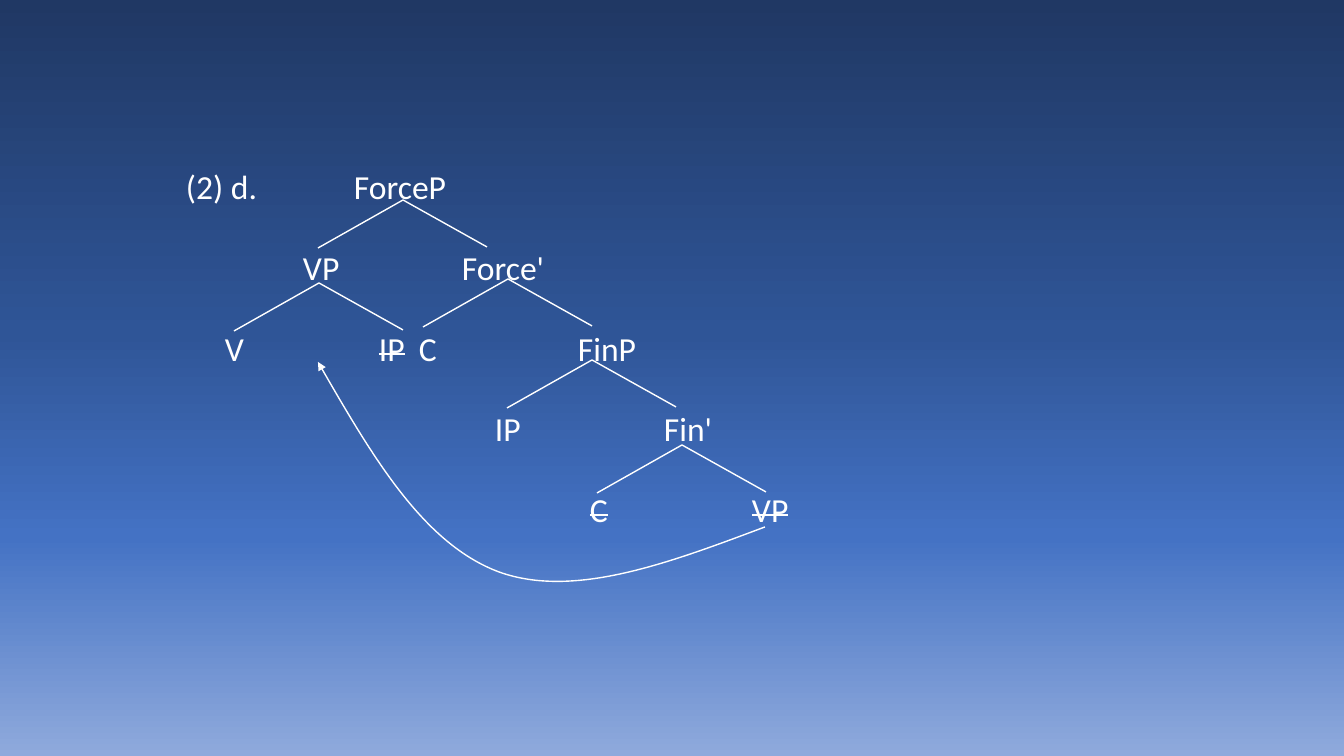
from typing import NamedTuple

from lxml import etree
from pptx import Presentation, util as u
from pptx.dml.color import RGBColor
from pptx.enum import text
from pptx.oxml.ns import qn

PX = 914400 / 100.8
COLOURS = {"ink": "FFFFFF", "navy": "203864", "deep": "2F5597",
           "blue": "4472C4", "pale": "8FAADC"}
SKY = [(0, "navy"), (44, "deep"), (71, "blue"), (100, "pale")]
BOX_LEFT, BOX_TOP, BOX_WIDTH, BOX_HEIGHT = 77, 81, 1190, 596
INSET = 10


class Point(NamedTuple):
    x: int
    y: int


class Node(NamedTuple):
    x: int
    label: str
    struck: bool = False


LEVELS = [
    [Node(186, "(2) d."), Node(354, "ForceP")],
    [Node(303, "VP"), Node(462, "Force'")],
    [Node(225, "V"), Node(379, "IP", True), Node(419, "C"), Node(578, "FinP")],
    [Node(495, "IP"), Node(664, "Fin'")],
    [Node(590, "C", True), Node(752, "VP", True)],
]
APEXES = [Point(403, 200), Point(508, 279), Point(592, 360),
          Point(682, 445), Point(319, 283)]
MOVEMENT = [Point(765, 527), Point(669, 563), Point(574, 599), Point(499, 572),
            Point(424, 544), Point(371, 454), Point(318, 362)]


def px(length: int) -> u.Emu:
    return u.Emu(round(length * PX))


def colour(name: str) -> RGBColor:
    return RGBColor.from_string(COLOURS[name])


def paint_background(page) -> None:
    fill = page.background.fill
    fill.gradient()
    fill.gradient_angle = 270
    stops = page.element.find(".//" + qn("a:gsLst"))
    for stop in list(stops):
        stops.remove(stop)
    for percent, name in SKY:
        stop = etree.SubElement(stops, qn("a:gs"), pos=str(percent * 1000))
        etree.SubElement(stop, qn("a:srgbClr"), val=COLOURS[name])


def add_span(para, words: str, *, struck: bool = False, size: int = 24) -> None:
    span = para.add_run()
    span.text = words
    span.font.name = "Calibri"
    span.font.size = u.Pt(size)
    span.font.color.rgb = colour("ink")
    if struck:
        span.font._element.set("strike", "sngStrike")


def write_level(para, nodes: list[Node]) -> None:
    """Put each node of one tree level at its own tab stop."""
    para.line_spacing = u.Pt(57.6)
    for node in nodes:
        add_span(para, "\t")
        add_span(para, node.label, struck=node.struck)
    settings = para._p.get_or_add_pPr()
    tabs = etree.SubElement(settings, qn("a:tabLst"))
    for node in nodes:
        stop = px(node.x - BOX_LEFT - INSET)
        etree.SubElement(tabs, qn("a:tab"), pos=str(stop), algn="l")


def write_tree(page) -> None:
    box = page.shapes.add_textbox(px(BOX_LEFT), px(BOX_TOP),
                                  px(BOX_WIDTH), px(BOX_HEIGHT))
    frame = box.text_frame
    frame.word_wrap = True
    frame.vertical_anchor = text.MSO_ANCHOR.TOP
    frame.margin_left = frame.margin_right = px(INSET)
    frame.margin_top, frame.margin_bottom = px(45), px(5)
    for index, nodes in enumerate(LEVELS):
        para = frame.add_paragraph() if index else frame.paragraphs[0]
        write_level(para, nodes)


def draw_outline(page, points: list[Point]):
    builder = page.shapes.build_freeform(*points[0], scale=PX)
    builder.add_line_segments(points[1:], close=False)
    outline = builder.convert_to_shape()
    outline.shadow.inherit = False
    outline.fill.background()
    outline.line.color.rgb = colour("ink")
    outline.line.width = u.Pt(1)
    return outline


def draw_branches(page, apex: Point) -> None:
    draw_outline(page, [Point(apex.x - 85, apex.y + 48), apex,
                        Point(apex.x + 84, apex.y + 47)])


def draw_movement(page) -> None:
    """Draw the arrow as cubic curves, three points to a curve."""
    arrow = draw_outline(page, MOVEMENT)
    route = arrow._element.find(".//" + qn("a:path"))
    segments = route.findall(qn("a:lnTo"))
    for start in range(0, len(segments), 3):
        curve = etree.SubElement(route, qn("a:cubicBezTo"))
        for segment in segments[start:start + 3]:
            curve.append(segment[0])
            route.remove(segment)
    line = arrow.line._get_or_add_ln()
    etree.SubElement(line, qn("a:tailEnd"), type="triangle")


def main() -> None:
    deck = Presentation()
    deck.slide_width, deck.slide_height = px(1344), px(756)
    page = deck.slides.add_slide(deck.slide_layouts[6])
    paint_background(page)
    write_tree(page)
    for apex in APEXES:
        draw_branches(page, apex)
    draw_movement(page)
    deck.save("out.pptx")


if __name__ == "__main__":
    main()
